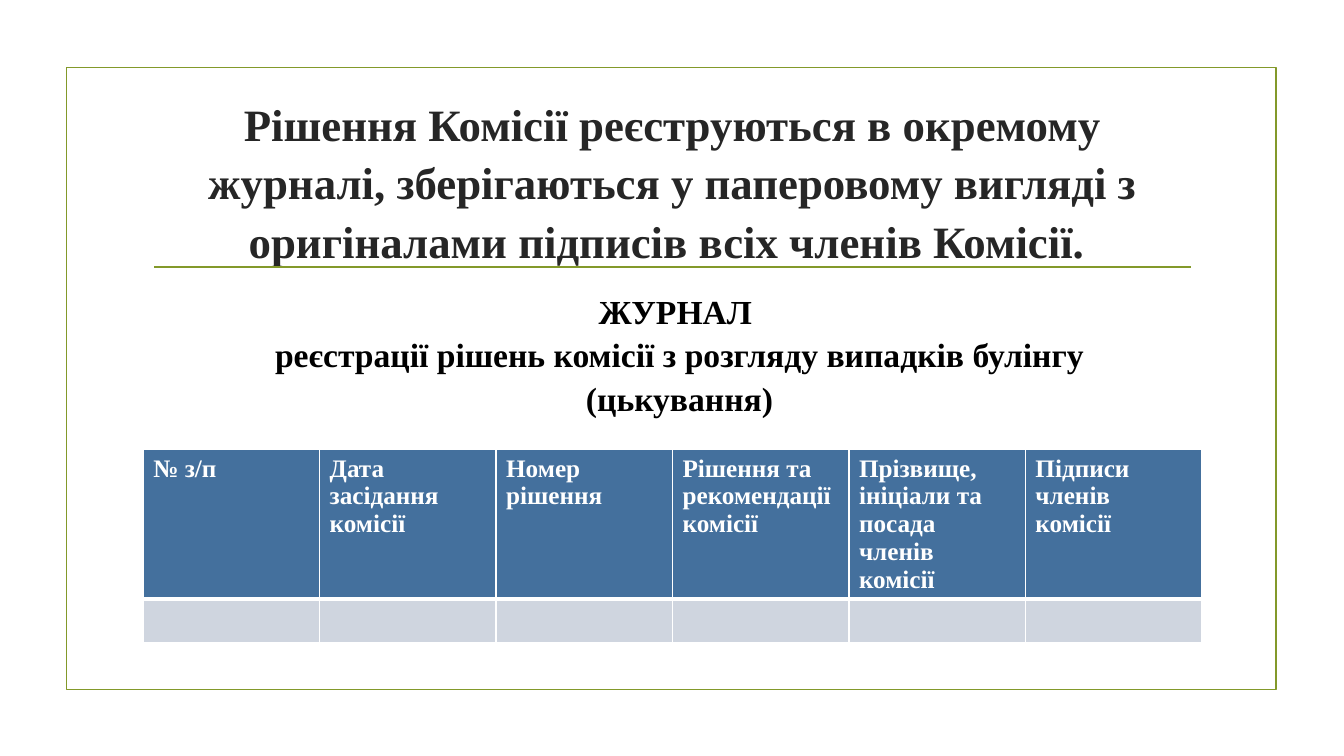
from pptx import Presentation
from pptx.dml.color import RGBColor
from pptx.enum import shapes, text
from pptx.oxml import parse_xml
from pptx.oxml.ns import nsdecls, qn
from pptx.util import Inches, Pt

COLORS = {
    "accent": "83992A",
    "title": "262626",
    "text": "000000",
    "white": "FFFFFF",
    "header": "44709D",
    "row": "CFD5DF",
}
FONT = "Times New Roman"
HEADERS = [
    "№ з/п",
    "Дата засідання комісії",
    "Номер рішення",
    "Рішення та рекомендації комісії",
    "Прізвище, ініціали та посада членів комісії",
    "Підписи членів комісії",
]


def rgb(name):
    return RGBColor.from_string(COLORS[name])


def write(tf, content, size, color, align=None, spacing=None):
    tf.word_wrap = True
    p = tf.paragraphs[0]
    p.text = content
    p.alignment = align
    p.line_spacing = spacing
    for r in p.runs:
        r.font.name = FONT
        r.font.size = Pt(size)
        r.font.bold = True
        r.font.color.rgb = rgb(color)


def style_line(sp):
    sp.line.color.rgb = rgb("accent")
    sp.line.width = Pt(1.25)


def add_frame(s, x, y, w, h):
    sp = s.shapes.add_shape(
        shapes.MSO_SHAPE.RECTANGLE, Inches(x), Inches(y), Inches(w), Inches(h))
    sp.shadow.inherit = False
    sp.fill.background()
    style_line(sp)


def add_title(s, x, y, w, h):
    sp = s.shapes.title
    sp.left, sp.top, sp.width, sp.height = map(Inches, (x, y, w, h))
    sp.text_frame.vertical_anchor = text.MSO_ANCHOR.MIDDLE
    write(sp.text_frame,
          "Рішення Комісії реєструються в окремому журналі, зберігаються "
          "у паперовому вигляді з оригіналами підписів всіх членів Комісії. ",
          32, "title", text.PP_ALIGN.CENTER, 1.08)
    rule_y = Inches(y + h + 0.15)
    rule = s.shapes.add_connector(
        shapes.MSO_CONNECTOR.STRAIGHT,
        Inches(x + 0.11), rule_y, Inches(x + w - 0.11), rule_y)
    style_line(rule)
    rule._element.spPr.append(parse_xml(f"<a:effectLst {nsdecls('a')}/>"))


def add_subtitle(s, x, y, w, h):
    sp = s.shapes.add_textbox(Inches(x), Inches(y), Inches(w), Inches(h))
    write(sp.text_frame,
          "ЖУРНАЛ \vреєстрації рішень комісії з розгляду випадків булінгу "
          "(цькування)",
          24, "text", text.PP_ALIGN.CENTER, 1.08)


def set_borders(cell, bottom):
    tcPr = cell._tc.get_or_add_tcPr()
    widths = {"lnL": 1, "lnR": 1, "lnT": 1, "lnB": bottom}
    for i, (side, width) in enumerate(widths.items()):
        tcPr.insert(i, parse_xml(
            f'<a:{side} {nsdecls("a")} w="{Pt(width)}"><a:solidFill>'
            f'<a:srgbClr val="{COLORS["white"]}"/></a:solidFill></a:{side}>'))


def add_journal(s, x, y, w, h):
    table = s.shapes.add_table(
        2, len(HEADERS), Inches(x), Inches(y), Inches(w), Inches(h)).table
    table.rows[1].height = Inches(0.43)
    table.rows[0].height = Inches(h - 0.43)
    for i, header in enumerate(HEADERS):
        table.columns[i].width = Inches(w / len(HEADERS))
        write(table.cell(0, i).text_frame, header, 18, "white")
        for row, fill, bottom in ((0, "header", 3), (1, "row", 1)):
            cell = table.cell(row, i)
            cell.fill.solid()
            cell.fill.fore_color.rgb = rgb(fill)
            set_borders(cell, bottom)


def main():
    prs = Presentation()
    prs.slide_width = Inches(13.33)
    prs.slide_height = Inches(7.5)
    s = prs.slides.add_slide(prs.slide_layouts[5])
    add_frame(s, 0.66, 0.67, 12, 6.17)
    add_title(s, 1.42, 1.07, 10.5, 1.43)
    add_journal(s, 1.42, 4.46, 10.5, 1.9)
    add_subtitle(s, 2.16, 2.8, 9.16, 1.31)
    prs.save("out.pptx")


if __name__ == "__main__":
    main()
